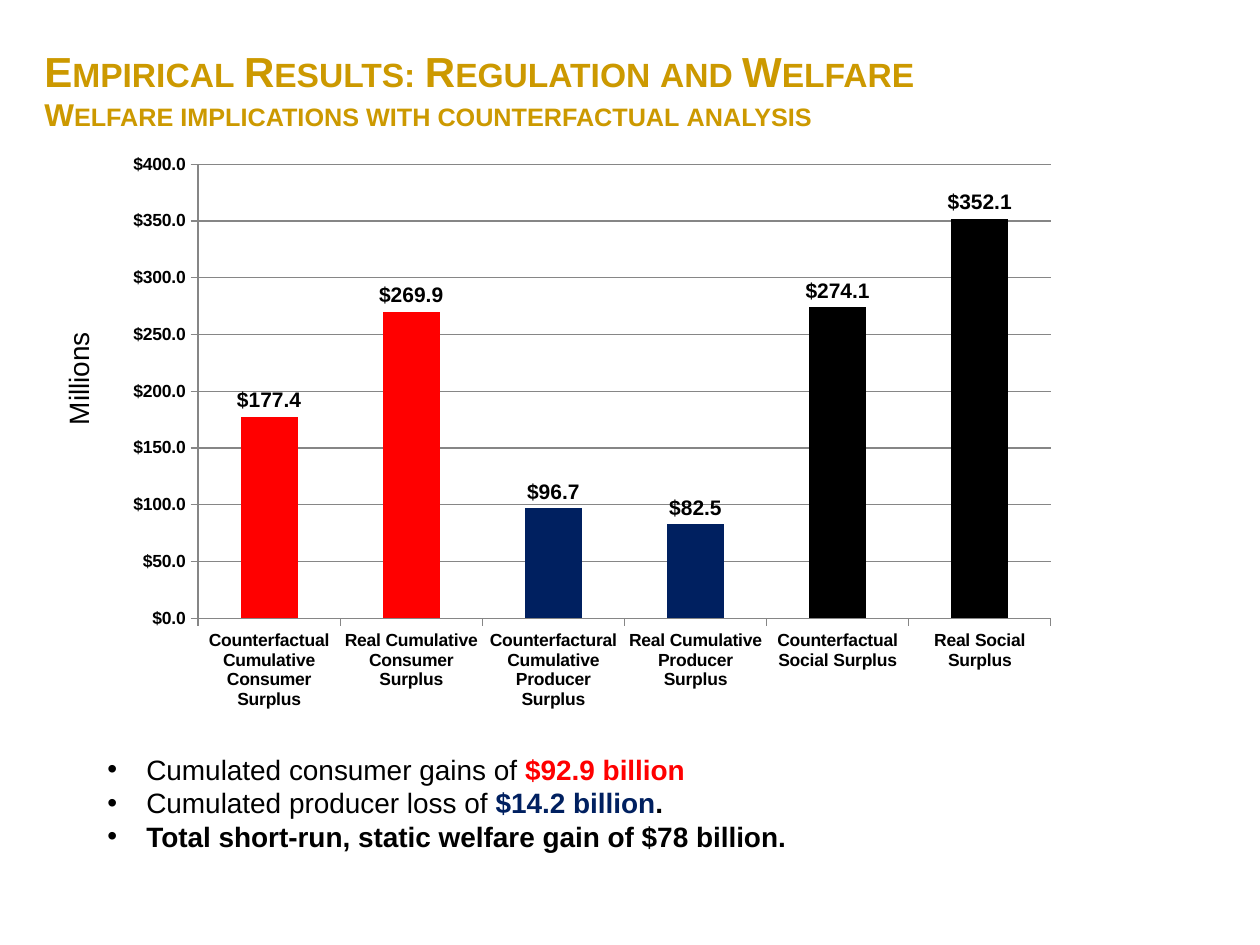
"""Build the slide on regulation and welfare: title, column chart and conclusions."""
import pptx
import pptx.chart.data
import pptx.dml.color
import pptx.enum.chart
import pptx.enum.text
import pptx.oxml
import pptx.util
from lxml import etree

PX = 914400 / 126
FONT = "Arial"
BLACK, RED, NAVY, GOLD, GRAY = "000000", "FF0000", "002060", "CC9900", "868686"
DOLLARS = '"$"#,##0.0'

TITLE = [
    ("Empirical Results: Regulation and Welfare", 24),
    ("Welfare implications with counterfactual analysis", 18),
]
SURPLUSES = [
    ("Counterfactual Cumulative Consumer Surplus", 177.4, RED),
    ("Real Cumulative Consumer Surplus", 269.9, RED),
    ("Counterfactural Cumulative Producer Surplus", 96.7, NAVY),
    ("Real Cumulative Producer Surplus", 82.5, NAVY),
    ("Counterfactual Social Surplus", 274.1, BLACK),
    ("Real Social Surplus", 352.1, BLACK),
]
CONCLUSIONS = [
    [("Cumulated consumer gains of ", BLACK, False), ("$92.9 billion", RED, True)],
    [("Cumulated producer loss of ", BLACK, False), ("$14.2 billion", NAVY, True), (".", BLACK, True)],
    [("Total short-run, static welfare gain of $78 billion.", BLACK, True)],
]
PLOT_AREA = {"x": 0.087, "y": 0.035, "w": 0.893, "h": 0.787}


def px(length):
    return pptx.util.Emu(round(length * PX))


def color(value):
    return pptx.dml.color.RGBColor.from_string(value)


def set_font(font, size, value=None, bold=None):
    font.name, font.size = FONT, pptx.util.Pt(size)
    if value is not None:
        font.color.rgb = color(value)
    if bold is not None:
        font.bold = bold


def add_box(slide, left, top, width, height):
    frame = slide.shapes.add_textbox(px(left), px(top), px(width), px(height)).text_frame
    frame.word_wrap = True
    return frame


def add_title(slide):
    frame = add_box(slide, 32, 34, 1134, 79)
    frame.margin_top = px(11)
    heading = frame.paragraphs[0]
    set_font(heading.font, TITLE[0][1], GOLD, True)
    for index, (text, size) in enumerate(TITLE):
        if index:
            heading.add_line_break()
        run = heading.add_run()
        run.text = text
        set_font(run.font, size, GOLD, True)
        run.font._element.set("cap", "small")


def add_conclusions(slide):
    frame = add_box(slide, 32, 746, 1197, 115)
    for index, parts in enumerate(CONCLUSIONS):
        conclusion = frame.add_paragraph() if index else frame.paragraphs[0]
        conclusion.level = 1
        properties = conclusion._p.get_or_add_pPr()
        properties.set("marL", str(px(102)))
        properties.set("indent", str(px(-39)))
        etree.SubElement(properties, pptx.oxml.ns.qn("a:buFont"), typeface=FONT)
        etree.SubElement(properties, pptx.oxml.ns.qn("a:buChar"), char="•")
        set_font(conclusion.font, 16)
        for text, value, bold in parts:
            run = conclusion.add_run()
            run.text = text
            set_font(run.font, 16, value, bold)


def add_unit_label(slide):
    frame = add_box(slide, 55, 325, 59, 107)
    frame.word_wrap = False
    frame._txBody.bodyPr.set("vert", "vert270")
    unit = frame.paragraphs[0]
    unit.text = "Millions"
    unit.alignment = pptx.enum.text.PP_ALIGN.CENTER
    set_font(unit.font, 16, BLACK)


def place_plot(chart):
    plot_area = chart._chartSpace.chart.plotArea
    for old in plot_area.findall(pptx.oxml.ns.qn("c:layout")):
        plot_area.remove(old)
    layout = etree.Element(pptx.oxml.ns.qn("c:layout"))
    manual = etree.SubElement(layout, pptx.oxml.ns.qn("c:manualLayout"))
    settings = {"layoutTarget": "inner", "xMode": "edge", "yMode": "edge", **PLOT_AREA}
    for tag, value in settings.items():
        etree.SubElement(manual, pptx.oxml.ns.qn("c:" + tag), val=str(value))
    plot_area.insert(0, layout)


def add_surplus_chart(slide):
    data = pptx.chart.data.CategoryChartData()
    data.categories = [name for name, _, _ in SURPLUSES]
    data.add_series("Series 1", [amount for _, amount, _ in SURPLUSES])
    chart = slide.shapes.add_chart(
        pptx.enum.chart.XL_CHART_TYPE.COLUMN_CLUSTERED, px(115), px(144), px(955), px(577), data
    ).chart
    chart.has_legend = chart.has_title = False
    set_font(chart.font, 10, BLACK)
    place_plot(chart)

    amounts = chart.value_axis
    amounts.minimum_scale, amounts.maximum_scale, amounts.major_unit = 0, 400, 50
    amounts.tick_labels.number_format = DOLLARS
    amounts.tick_labels.number_format_is_linked = False
    amounts.has_major_gridlines = True
    for axis in (chart.category_axis, amounts):
        axis.major_tick_mark = pptx.enum.chart.XL_TICK_MARK.OUTSIDE
        axis.minor_tick_mark = pptx.enum.chart.XL_TICK_MARK.NONE
        set_font(axis.tick_labels.font, 10, BLACK, True)
    for line in (chart.category_axis.format.line, amounts.format.line, amounts.major_gridlines.format.line):
        line.color.rgb = color(GRAY)
        line.width = pptx.util.Pt(0.75)

    plot = chart.plots[0]
    plot.gap_width = 150
    plot.vary_by_categories = False
    series = plot.series[0]
    series.format.fill.solid()
    series.format.fill.fore_color.rgb = color("BBE0E3")
    for index, (_, _, value) in enumerate(SURPLUSES):
        fill = series.points[index].format.fill
        fill.solid()
        fill.fore_color.rgb = color(value)
    labels = series.data_labels
    labels.show_value = True
    labels.number_format = DOLLARS
    labels.number_format_is_linked = False
    labels.position = pptx.enum.chart.XL_LABEL_POSITION.OUTSIDE_END
    set_font(labels.font, 12, BLACK, True)


def main():
    deck = pptx.Presentation()
    deck.slide_width, deck.slide_height = px(1260), px(945)
    slide = deck.slides.add_slide(deck.slide_layouts[6])
    add_conclusions(slide)
    add_title(slide)
    add_surplus_chart(slide)
    add_unit_label(slide)
    deck.save("out.pptx")


if __name__ == "__main__":
    main()
